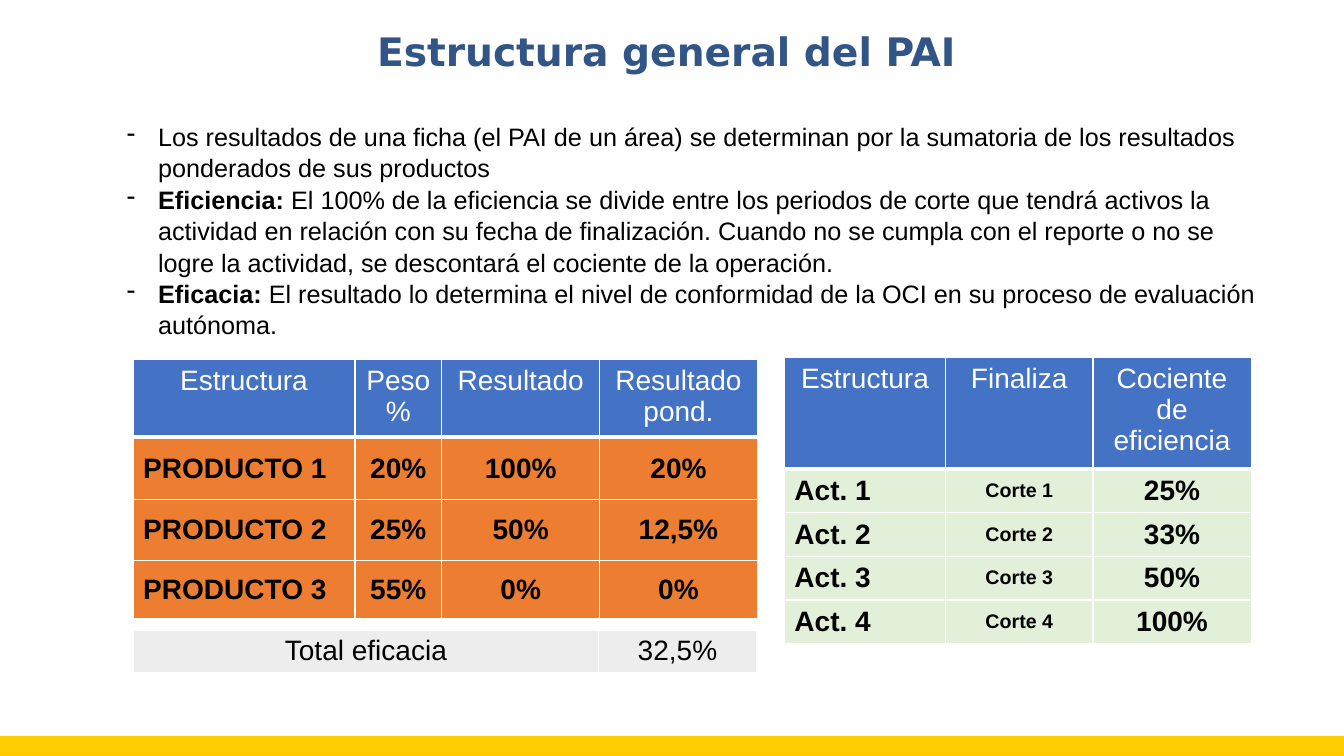
from lxml import etree
from pptx import Presentation
from pptx.dml.color import RGBColor
from pptx.enum.shapes import MSO_SHAPE
from pptx.enum.text import MSO_ANCHOR, MSO_AUTO_SIZE, PP_ALIGN
from pptx.oxml.ns import qn
from pptx.util import Inches, Pt

RECT = MSO_SHAPE.RECTANGLE
LEFT, CENTER = PP_ALIGN.LEFT, PP_ALIGN.CENTER
TOP, MIDDLE = MSO_ANCHOR.TOP, MSO_ANCHOR.MIDDLE
BLUE, WHITE, BLACK = "4472C4", "FFFFFF", "000000"
ORANGE, GREEN, GRAY = "ED7D31", "E2F0D9", "EDEDED"
LINE, THICK = 1, 3


def rgb(value):
    return RGBColor.from_string(value)


def write(p, text, size=20, font="Arial", color=BLACK, bold=False, align=LEFT):
    p.alignment = align
    r = p.add_run()
    r.text = text
    r.font.size = Pt(size)
    r.font.name = font
    r.font.bold = bold
    r.font.color.rgb = rgb(color)


prs = Presentation()
prs.slide_width, prs.slide_height = Inches(13.33), Inches(7.5)
s = prs.slides.add_slide(prs.slide_layouts[5])

bar = s.shapes.add_shape(RECT, 0, Inches(7.3), prs.slide_width, Inches(0.2))
bar.shadow.inherit = False
bar.fill.solid()
bar.fill.fore_color.rgb = rgb("FFCC01")
bar.line.fill.background()

title = s.shapes.title
title.left, title.top, title.width, title.height = map(Inches, (3.64, 0.22, 6.06, 0.57))
tf = title.text_frame
tf.word_wrap = True
tf.auto_size = MSO_AUTO_SIZE.NONE
tf.vertical_anchor = MIDDLE
write(tf.paragraphs[0], "Estructura general del PAI", size=28, font="DejaVu Sans",
      color="315587", bold=True)

points = [
    ("", "Los resultados de una ficha (el PAI de un área) se determinan por la sumatoria "
         "de los resultados ponderados de sus productos"),
    ("Eficiencia:", " El 100% de la eficiencia se divide entre los periodos de corte que "
                    "tendrá activos la actividad en relación con su fecha de finalización. "
                    "Cuando no se cumpla con el reporte o no se logre la actividad, se "
                    "descontará el cociente de la operación."),
    ("Eficacia:", " El resultado lo determina el nivel de conformidad de la OCI en su "
                  "proceso de evaluación autónoma."),
]
tf = s.shapes.add_textbox(*map(Inches, (1.16, 1.14, 11.42, 2.22))).text_frame
tf.word_wrap = True
for i, (term, text) in enumerate(points):
    p = tf.add_paragraph() if i else tf.paragraphs[0]
    p.line_spacing = 1.04
    pPr = p._p.get_or_add_pPr()
    pPr.set("marL", str(Inches(0.31)))
    pPr.set("indent", str(-Inches(0.31)))
    etree.SubElement(pPr, qn("a:buChar"), char="-")
    if term:
        write(p, term, size=18, bold=True)
    write(p, text, size=18)

tables = [
    dict(at=(1.32, 3.57), cols=[2.2, 0.86, 1.57, 1.56], rows=[0.76, 0.62, 0.6, 0.58],
         header=True, fill=ORANGE, sizes=[20, 20, 20, 20],
         cells=[["Estructura", "Peso %", "Resultado", "Resultado pond."],
                ["PRODUCTO 1", "20%", "100%", "20%"],
                ["PRODUCTO 2", "25%", "50%", "12,5%"],
                ["PRODUCTO 3", "55%", "0%", "0%"]]),
    dict(at=(1.32, 6.25), cols=[4.62, 1.56], rows=[0.43],
         header=False, fill=GRAY, sizes=[20, 20],
         cells=[["Total eficacia", "32,5%"]]),
    dict(at=(7.78, 3.55), cols=[1.6, 1.46, 1.57], rows=[1.1] + [0.43] * 4,
         header=True, fill=GREEN, sizes=[20, 14, 20],
         cells=[["Estructura", "Finaliza", "Cociente de eficiencia"],
                ["Act. 1", "Corte 1", "25%"],
                ["Act. 2", "Corte 2", "33%"],
                ["Act. 3", "Corte 3", "50%"],
                ["Act. 4", "Corte 4", "100%"]]),
]
for t in tables:
    cols, rows = t["cols"], t["rows"]
    box = map(Inches, (*t["at"], sum(cols), sum(rows)))
    table = s.shapes.add_table(len(rows), len(cols), *box).table
    table.first_row = t["header"]
    table.horz_banding = False
    for col, width in zip(table.columns, cols):
        col.width = Inches(width)
    for i, (row, height) in enumerate(zip(table.rows, rows)):
        row.height = Inches(height)
        is_header = t["header"] and i == 0
        is_body = t["header"] and i > 0
        for j, cell in enumerate(row.cells):
            cell.vertical_anchor = MIDDLE if is_body else TOP
            write(cell.text_frame.paragraphs[0], t["cells"][i][j],
                  size=20 if is_header else t["sizes"][j],
                  color=WHITE if is_header else BLACK, bold=is_body,
                  align=LEFT if is_body and j == 0 else CENTER)
            tcPr = cell._tc.get_or_add_tcPr()
            for side in ("lnL", "lnR", "lnT", "lnB"):
                width = THICK if side == "lnB" and not is_body else LINE
                ln = etree.SubElement(tcPr, qn("a:" + side), w=str(Pt(width)))
                paint = etree.SubElement(ln, qn("a:solidFill"))
                etree.SubElement(paint, qn("a:srgbClr"), val=WHITE)
            cell.fill.solid()
            cell.fill.fore_color.rgb = rgb(BLUE if is_header else t["fill"])

prs.save("out.pptx")
